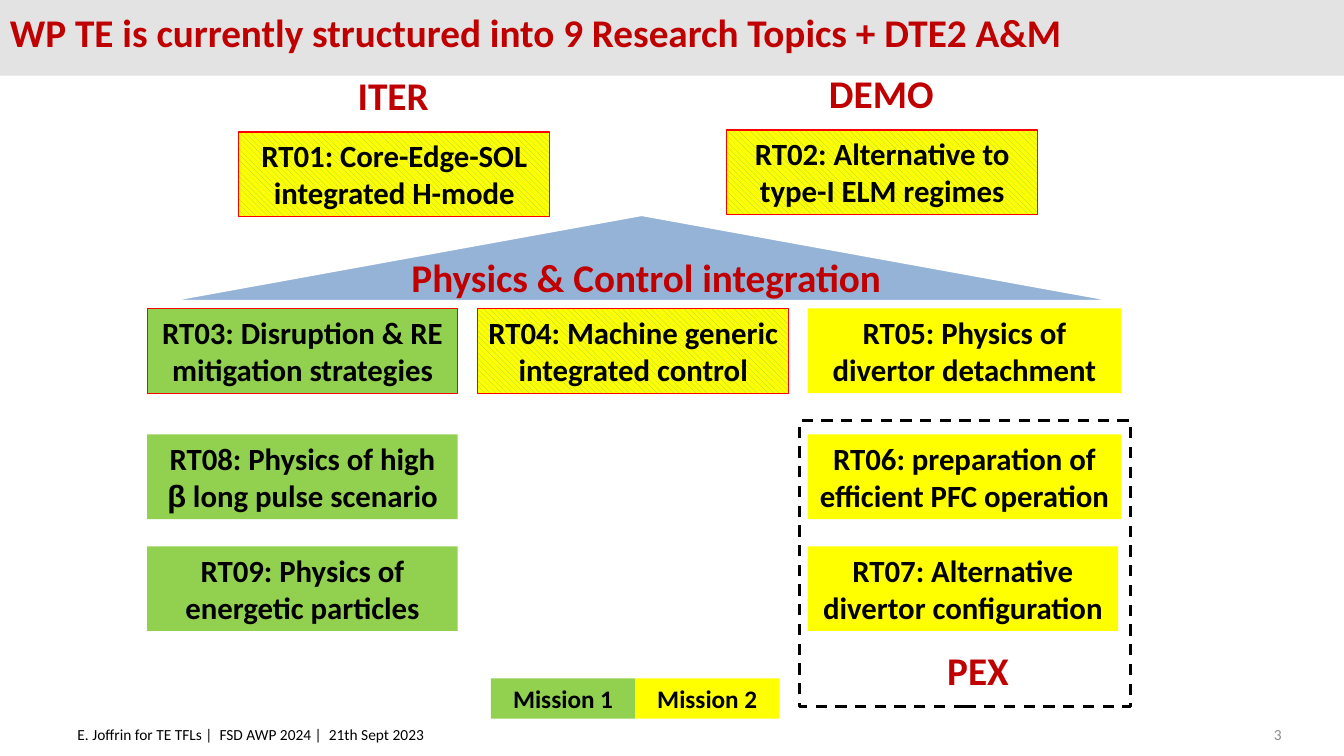
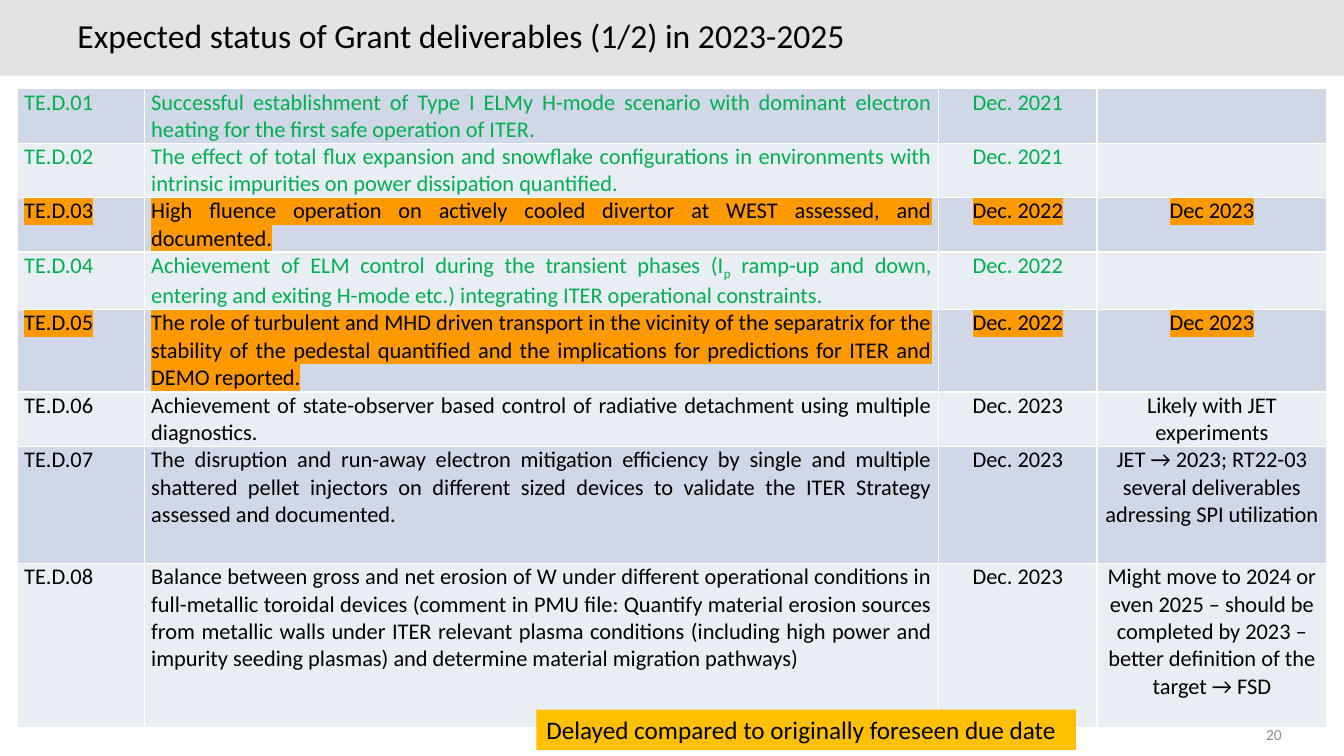
from dataclasses import dataclass

from lxml import etree
from pptx import Presentation
from pptx.dml.color import RGBColor
from pptx.enum import dml, shapes, text
from pptx.oxml import ns
from pptx.util import Inches, Pt


@dataclass(frozen=True)
class Theme:
    font: str = "Calibri"
    band: str = "E3E3E3"
    red: str = "C00000"
    black: str = "000000"
    white: str = "FFFFFF"
    grey: str = "8C8C8C"
    mission1: str = "92D050"
    mission2: str = "FFFF00"
    outline: str = "FF0000"
    roof: str = "95B3D7"
    done: str = "00B050"
    marker: str = "FF9900"
    delayed: str = "FFC000"
    stripes: tuple = ("D0D8E8", "E9EDF4")
    heading: int = 28
    title: int = 24
    topic: int = 22
    legend: int = 18
    cell: int = 16
    footer: int = 11


T = Theme()
rgb = RGBColor.from_string
ALIGN = text.PP_ALIGN
BOTH = "both missions"


def write(tf, content, size, color=T.black, bold=False, align=ALIGN.LEFT, highlight=None):
    """Fill a frame with a string, or with (string, font, baseline) pieces."""
    p = tf.paragraphs[0]
    p.alignment = align
    pieces = [(content, T.font, None)] if isinstance(content, str) else content
    for words, font, baseline in pieces:
        r = p.add_run()
        r.text = words
        r.font.name, r.font.size, r.font.bold = font, Pt(size), bold
        r.font.color.rgb = rgb(color)
        props = r.font._element
        if baseline:
            props.set("baseline", str(baseline))
        if highlight:
            mark = etree.Element(ns.qn("a:highlight"))
            etree.SubElement(mark, ns.qn("a:srgbClr"), val=highlight)
            props.find(ns.qn("a:solidFill")).addnext(mark)
    return p


def add_block(slide, at, content, size, fill=None, line=None, anchor=text.MSO_ANCHOR.TOP, **style):
    """Add a text box, or a rectangle when there is a fill."""
    place = [Inches(v) for v in at]
    if fill is None:
        sp = slide.shapes.add_textbox(*place)
    else:
        sp = slide.shapes.add_shape(shapes.MSO_SHAPE.RECTANGLE, *place)
        sp.shadow.inherit = False
        if fill == BOTH:
            sp.fill.patterned()
            sp.fill.pattern = dml.MSO_PATTERN.WIDE_DOWNWARD_DIAGONAL
            sp.fill.fore_color.rgb = rgb(T.mission1)
            sp.fill.back_color.rgb = rgb(T.mission2)
        else:
            sp.fill.solid()
            sp.fill.fore_color.rgb = rgb(fill)
        if line:
            sp.line.color.rgb = rgb(line)
            sp.line.width = Pt(0.75)
        else:
            sp.line.fill.background()
    tf = sp.text_frame
    tf.word_wrap = True
    tf.vertical_anchor = anchor
    return write(tf, content, size, **style)


prs = Presentation()
prs.slide_width, prs.slide_height = Inches(13.33), Inches(7.5)

# Grey title band, title and page number on both slides
slides = []
for title, left, size, color, bold, number in (
    ("WP TE is currently structured into 9 Research Topics + DTE2 A&M",
     0, T.heading, T.red, True, "3"),
    ("Expected status of Grant deliverables (1/2) in 2023-2025",
     0.67, T.title, T.black, False, "20"),
):
    s = prs.slides.add_slide(prs.slide_layouts[6])
    add_block(s, (0, 0, 13.33, 0.75), "", size, fill=T.band)
    p = add_block(s, (left, 0.13, 12.02 - left, 0.5), title, size, color=color, bold=bold,
                  anchor=text.MSO_ANCHOR.MIDDLE)
    p.line_spacing = Pt(24)
    add_block(s, (12.02, 7.14, 0.79, 0.22), number, T.footer, color=T.grey, align=ALIGN.RIGHT)
    slides.append(s)
topics_slide, status_slide = slides

# Research topics
LEFT, MIDDLE, RIGHT = 1.46, 4.74, 8.01
ROW1, ROW2, ROW3 = 3.06, 4.31, 5.42
NARROW, WIDE = 3.08, 3.11
beta_topic = (("RT08: Physics of high ", T.font, None), ("β", "Arial", None),
              (" long pulse scenario", T.font, None))
for x, y, width, fill, line, topic in (
    (2.37, 1.31, NARROW, BOTH, T.outline, "RT01: Core-Edge-SOL integrated H-mode"),
    (7.21, 1.29, NARROW, BOTH, T.outline, "RT02: Alternative to type-I ELM regimes"),
    (LEFT, ROW1, NARROW, T.mission1, T.outline, "RT03: Disruption & RE mitigation strategies"),
    (MIDDLE, ROW1, NARROW, BOTH, T.outline, "RT04: Machine generic integrated control"),
    (RIGHT, ROW1, WIDE, T.mission2, None, "RT05: Physics of divertor detachment"),
    (RIGHT, ROW2, WIDE, T.mission2, None, "RT06: preparation of efficient PFC operation"),
    (RIGHT, ROW3, NARROW, T.mission2, None, "RT07: Alternative divertor configuration"),
    (LEFT, ROW2, NARROW, T.mission1, None, beta_topic),
    (LEFT, ROW3, NARROW, T.mission1, None, "RT09: Physics of energetic particles"),
):
    add_block(topics_slide, (x, y, width, 0.84), topic, T.topic, fill, line,
              bold=True, align=ALIGN.CENTER)

for i, (mission, fill) in enumerate((("Mission 1", T.mission1), ("Mission 2", T.mission2))):
    add_block(topics_slide, (4.87 + i * 1.43, 6.73, 1.43, 0.4), mission, T.legend, fill,
              bold=True, align=ALIGN.CENTER)

pex_frame = topics_slide.shapes.add_shape(
    shapes.MSO_SHAPE.RECTANGLE, Inches(7.93), Inches(4.17), Inches(3.28), Inches(2.84))
pex_frame.shadow.inherit = False
pex_frame.fill.background()
pex_frame.line.color.rgb = rgb(T.black)
pex_frame.line.width = Pt(2)
pex_frame.line.dash_style = dml.MSO_LINE.DASH

roof = topics_slide.shapes.add_shape(
    shapes.MSO_SHAPE.ISOSCELES_TRIANGLE, Inches(1.63), Inches(2.13), Inches(9.47), Inches(0.86))
roof.adjustments[0] = 0.5
roof.shadow.inherit = False
roof.fill.solid()
roof.fill.fore_color.rgb = rgb(T.roof)
roof.line.color.rgb = rgb(T.white)
roof.line.width = Pt(2)

for x, y, width, heading in (
    (9.1, 6.36, 1.2, "PEX"),
    (3.3, 0.66, 1.2, "ITER"),
    (8.03, 0.64, 1.42, "DEMO"),
    (3.91, 2.46, 5, "Physics & Control integration"),
):
    add_block(topics_slide, (x, y, width, 0.57), heading, T.heading,
              color=T.red, bold=True, align=ALIGN.CENTER)
add_block(topics_slide, (0.67, 7.14, 3.8, 0.36),
          "E. Joffrin for TE TFLs |  FSD AWP 2024 |  21th Sept 2023", T.footer)

# Grant deliverables: row height, state, description, due date, remark
DONE, LATE, OPEN = (T.done, None), (T.black, T.marker), (T.black, None)
elm_control = (("Achievement of ELM control during the transient phases (I", T.font, None),
               ("p", T.font, -25000),
               (" ramp-up and down, entering and exiting H-mode etc.) integrating ITER "
                "operational constraints.", T.font, None))
deliverables = (
    (0.54, DONE, "Successful establishment of Type I ELMy H-mode scenario with dominant electron "
     "heating for the first safe operation of ITER.", "Dec. 2021", ""),
    (0.54, DONE, "The effect of total flux expansion and snowflake configurations in environments "
     "with intrinsic impurities on power dissipation quantified.", "Dec. 2021", ""),
    (0.54, LATE, "High fluence operation on actively cooled divertor at WEST assessed, and "
     "documented.", "Dec. 2022", "Dec 2023"),
    (0.57, DONE, elm_control, "Dec. 2022", ""),
    (0.82, LATE, "The role of turbulent and MHD driven transport in the vicinity of the separatrix "
     "for the stability of the pedestal quantified and the implications for predictions for ITER "
     "and DEMO reported.", "Dec. 2022", "Dec 2023"),
    (0.54, OPEN, "Achievement of state-observer based control of radiative detachment using "
     "multiple diagnostics.", "Dec. 2023", "Likely with JET experiments"),
    (1.16, OPEN, "The disruption and run-away electron mitigation efficiency by single and "
     "multiple shattered pellet injectors on different sized devices to validate the ITER "
     "Strategy assessed and documented.", "Dec. 2023",
     "JET → 2023; RT22-03 several deliverables adressing SPI utilization"),
    (1.63, OPEN, "Balance between gross and net erosion of W under different operational "
     "conditions in full-metallic toroidal devices (comment in PMU file: Quantify material "
     "erosion sources from metallic walls under ITER relevant plasma conditions (including high "
     "power and impurity seeding plasmas) and determine material migration pathways)",
     "Dec. 2023", "Might move to 2024 or even 2025 – should be completed by 2023 – better "
     "definition of the target → FSD"),
)
widths = (1.26, 7.88, 1.57, 2.28)
aligns = (ALIGN.JUSTIFY, ALIGN.JUSTIFY, ALIGN.CENTER, ALIGN.CENTER)
table = status_slide.shapes.add_table(
    len(deliverables), len(widths), Inches(0.17), Inches(0.88), Inches(sum(widths)),
    Inches(sum(row[0] for row in deliverables))).table
table.first_row = table.horz_banding = False
for column, width in zip(table.columns, widths):
    column.width = Inches(width)
for i, (height, (color, highlight), *columns) in enumerate(deliverables):
    table.rows[i].height = Inches(height)
    for j, content in enumerate((f"TE.D.{i + 1:02}", *columns)):
        cell = table.cell(i, j)
        cell.fill.solid()
        cell.fill.fore_color.rgb = rgb(T.stripes[i % 2])
        cell.margin_left = cell.margin_right = Inches(0.07)
        cell.margin_top = cell.margin_bottom = 0
        write(cell.text_frame, content, T.cell, color, align=aligns[j], highlight=highlight)

add_block(status_slide, (5.32, 7.04, 5.35, 0.4),
          "Delayed compared to originally foreseen due date", T.legend, T.delayed)

prs.save("out.pptx")
